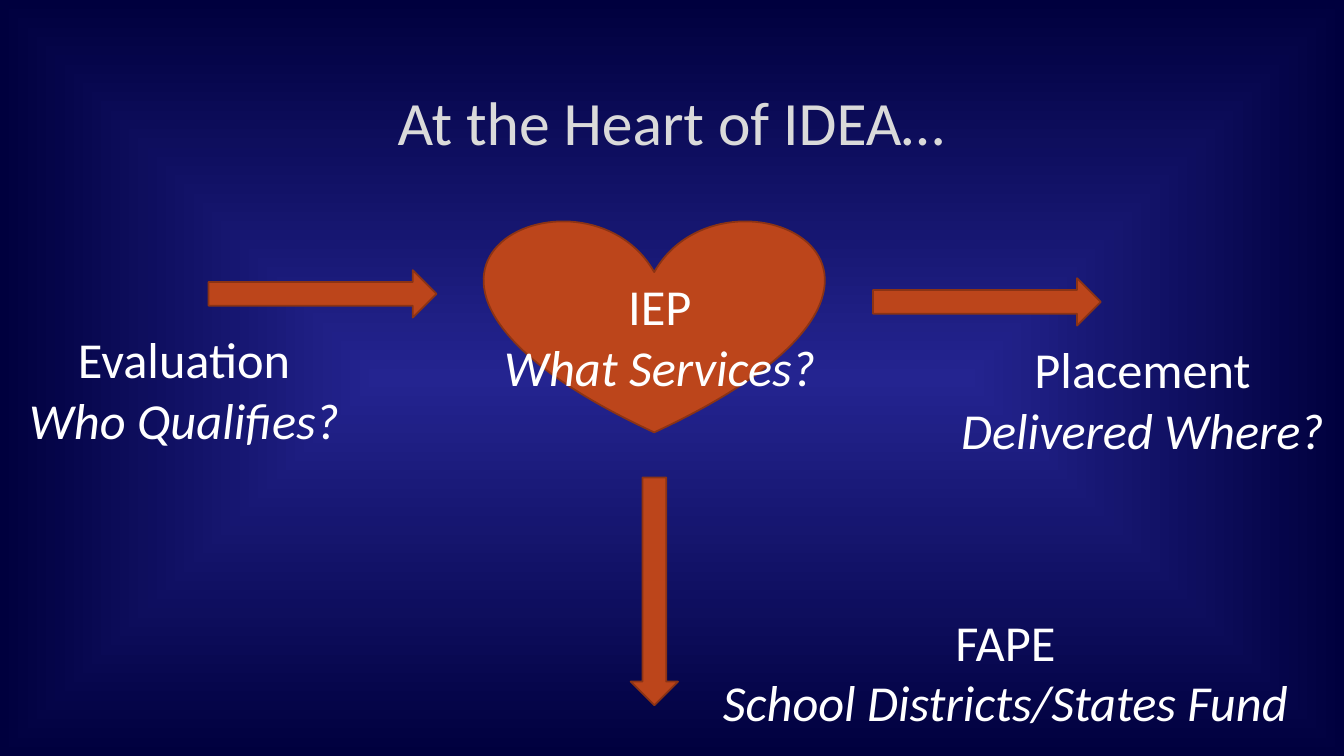
from lxml.etree import SubElement
from pptx import Presentation
from pptx.dml.color import RGBColor
from pptx.enum.shapes import MSO_SHAPE
from pptx.enum.text import MSO_ANCHOR, PP_ALIGN
from pptx.oxml import parse_xml
from pptx.oxml.ns import nsdecls, qn
from pptx.util import Pt

COLORS = {
    "centre": "242490",
    "edge": "00003E",
    "shape": "BC451B",
    "border": "8B3314",
    "title": "DADADA",
    "title_outline": "404040",
    "text": "FFFFFF",
    "shadow": "000000",
}
ARROW_SIZE = (162.75, 33.85)
LABEL_HEIGHT = 94.5


def color(name):
    return RGBColor.from_string(COLORS[name])


def add_span(para, text, size=36, tint="text", italic=False):
    span = para.add_run()
    span.text = text
    span.font.name = "Calibri"
    span.font.size = Pt(size)
    span.font.italic = italic
    span.font.color.rgb = color(tint)
    return span


def add_glow(span):
    """Give a span a faint outline and a soft shadow."""
    properties = span.font.fill._xPr
    outline = parse_xml(
        f'<a:ln {nsdecls("a")} w="9525"><a:solidFill>'
        f'<a:srgbClr val="{COLORS["title_outline"]}"><a:alpha val="10000"/></a:srgbClr>'
        '</a:solidFill><a:prstDash val="solid"/></a:ln>')
    shadow = parse_xml(
        f'<a:effectLst {nsdecls("a")}>'
        '<a:outerShdw blurRad="38100" dist="25400" dir="2700000">'
        f'<a:srgbClr val="{COLORS["shadow"]}"><a:alpha val="60000"/></a:srgbClr>'
        '</a:outerShdw></a:effectLst>')
    properties.insert(0, outline)
    properties.find(qn("a:solidFill")).addnext(shadow)


class SlidePainter:
    def __init__(self, page):
        self.page = page

    def background(self):
        fill = self.page.background.fill
        fill.gradient()
        for stop, name in zip(fill.gradient_stops, ("centre", "edge")):
            stop.color.rgb = color(name)
        gradient = self.page.background._cSld.find(".//" + qn("a:gradFill"))
        gradient.remove(gradient.find(qn("a:lin")))
        shade = SubElement(gradient, qn("a:path"), {"path": "shape"})
        SubElement(shade, qn("a:fillToRect"), dict.fromkeys("ltrb", "50000"))

    def shape(self, kind, left, top, width, height, rotation=0):
        shape = self.page.shapes.add_shape(
            kind, Pt(left), Pt(top), Pt(width), Pt(height))
        shape.rotation = rotation
        shape.shadow.inherit = False
        shape.fill.solid()
        shape.fill.fore_color.rgb = color("shape")
        shape.line.color.rgb = color("border")
        shape.line.width = Pt(1.25)

    def arrow(self, left, top, rotation=0):
        self.shape(MSO_SHAPE.RIGHT_ARROW, left, top, *ARROW_SIZE, rotation=rotation)

    def text_box(self, left, top, width, height):
        """Add a wrapped box and return its centred first paragraph."""
        box = self.page.shapes.add_textbox(Pt(left), Pt(top), Pt(width), Pt(height))
        frame = box.text_frame
        frame.word_wrap = True
        frame.vertical_anchor = MSO_ANCHOR.TOP
        para = frame.paragraphs[0]
        para.alignment = PP_ALIGN.CENTER
        return para

    def title(self, text, left, top, width, height):
        para = self.text_box(left, top, width, height)
        self.page.shapes[-1].text_frame.vertical_anchor = MSO_ANCHOR.MIDDLE
        add_glow(add_span(para, text, size=44, tint="title"))

    def label(self, heading, question, left, top, width):
        para = self.text_box(left, top, width, LABEL_HEIGHT)
        add_span(para, heading)
        para.add_line_break()
        add_span(para, question, italic=True)


def main():
    deck = Presentation()
    deck.slide_width, deck.slide_height = Pt(960), Pt(540)
    painter = SlidePainter(deck.slides.add_slide(deck.slide_layouts[6]))

    painter.background()
    painter.shape(MSO_SHAPE.HEART, 346.3, 156.25, 242, 152.6)
    painter.label("IEP", "What Services?", 346.3, 193, 250)
    painter.title("At the Heart of IDEA…", 72, 48.25, 815, 76.3)

    painter.arrow(386, 405.5, rotation=90)
    painter.arrow(623.5, 198.75)
    painter.arrow(149, 193)

    painter.label("Evaluation", "Who Qualifies?", 6.5, 231.2, 250)
    painter.label("Placement", "Delivered Where?", 679, 238.3, 274.3)
    painter.label("FAPE", "School Districts/States Fund", 493.9, 432.7, 448.6)

    deck.save("out.pptx")


if __name__ == "__main__":
    main()
